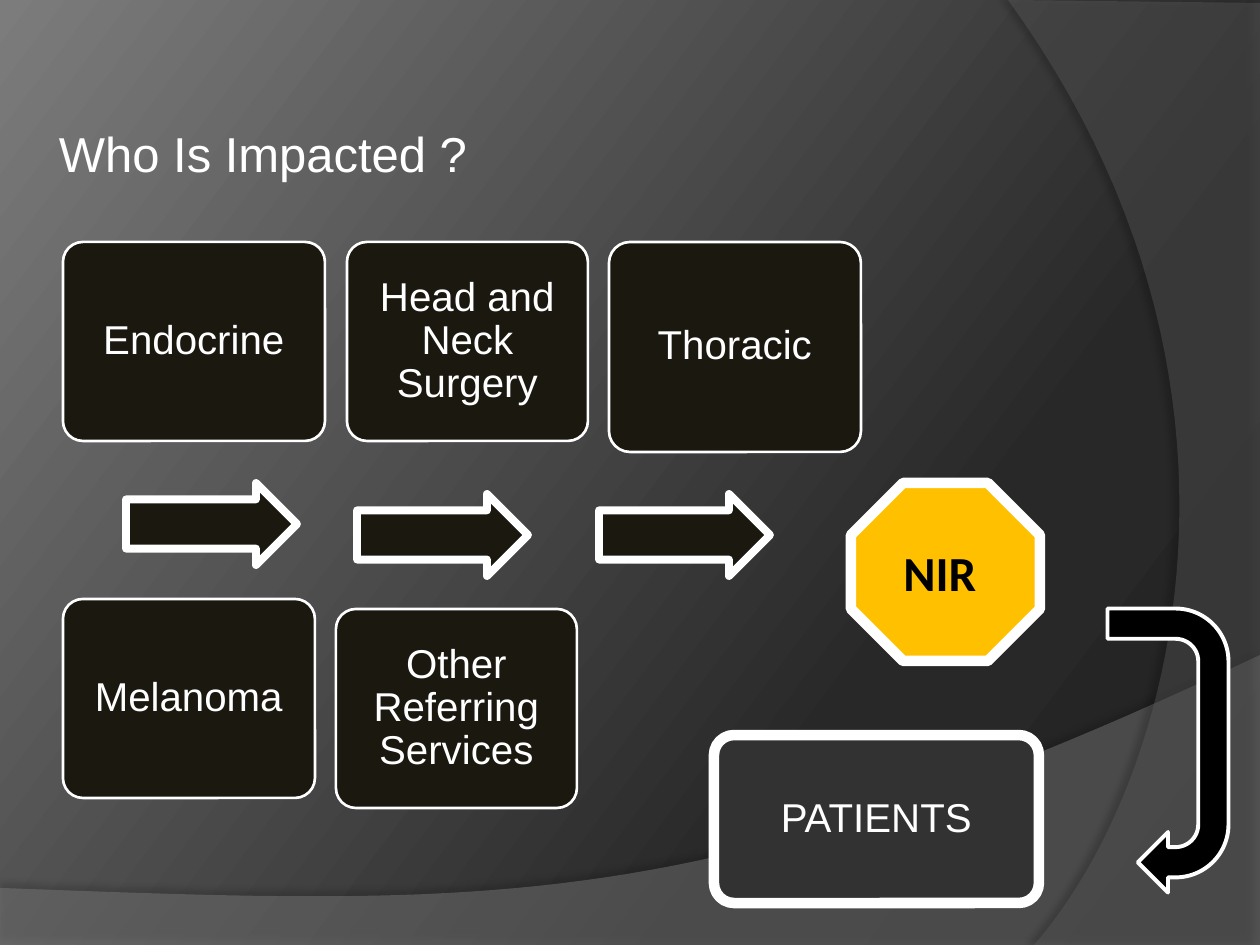
from dataclasses import dataclass

from lxml import etree
from pptx import Presentation
from pptx import util as u
from pptx.dml.color import RGBColor
from pptx.enum import shapes, text
from pptx.oxml import parse_xml
from pptx.oxml.ns import qn

PX = 914400 / 126
SHAPE = shapes.MSO_SHAPE
NS = ('xmlns:a="http://schemas.openxmlformats.org/drawingml/2006/main" '
      'xmlns:p="http://schemas.openxmlformats.org/presentationml/2006/main"')


@dataclass(frozen=True)
class Theme:
    white: str = "FFFFFF"
    black: str = "000000"
    card: str = "1B1810"
    patients: str = "323232"
    amber: str = "FFC000"
    wave: str = "7F7F7F"
    sweep: str = "5E5E5E"
    backdrop: tuple = ((0, "222222"), (30, "282828"), (100, "7C7C7C"))
    backdrop_angle: int = 217
    font: str = "Arial"
    badge_font: str = "Calibri"
    title_size: int = 28
    card_size: int = 23


T = Theme()


@dataclass(frozen=True)
class Block:
    """A preset shape: place in px, line width in points."""
    kind: int
    left: int
    top: int
    width: int
    height: int
    fill: str
    line: float
    adj: tuple = ()
    label: str = ""
    font: str = T.font
    size: int = T.card_size
    color: str = T.white
    bold: bool = False
    spacing: float = 0.9
    rotation: int = 0


@dataclass(frozen=True)
class Swoosh:
    """Translucent outline: straight corners, then one Bezier curve back."""
    corners: tuple
    curve: tuple
    fill: str
    alpha: int
    shadow_alpha: int
    shadow_distance: float
    shadow_angle: int


def px(n: float) -> u.Emu:
    return u.Emu(round(n * PX))


def rgb(value: str) -> RGBColor:
    return RGBColor.from_string(value)


def card(label: str, left: int, top: int, width: int, height: int) -> Block:
    return Block(SHAPE.ROUNDED_RECTANGLE, left, top, width, height,
                 T.card, 1.5, (0.1,), label)


def arrow(left: int, top: int) -> Block:
    return Block(SHAPE.RIGHT_ARROW, left, top, 171, 82, T.card, 4.5, (0.6, 0.5))


SWOOSHES = (
    Swoosh(((0, 888), (0, 946), (1260, 946), (1260, 655)),
           ((704, 919), (493, 906), (0, 888)), T.wave, 45, 35, 3.5, 270),
    Swoosh(((1260, 3), (1260, 945), (1034, 945)),
           ((1178, 780), (1283, 378), (1008, 0)), T.sweep, 40, 45, 4, 180),
)

BLOCKS = (
    card("Endocrine", 63, 242, 262, 199),
    card("Head and Neck Surgery", 347, 242, 241, 199),
    card("Thoracic", 609, 242, 252, 210),
    card("Melanoma", 63, 599, 252, 199),
    card("Other Referring Services", 336, 609, 241, 199),
    arrow(126, 483),
    arrow(357, 494),
    arrow(599, 494),
    Block(SHAPE.ROUNDED_RECTANGLE, 714, 735, 325, 168, T.patients, 6,
          (0.12,), "PATIENTS"),
    Block(SHAPE.OCTAGON, 851, 483, 189, 178, T.amber, 6, label="NIR ",
          font=T.badge_font, size=T.title_size, color=T.black, bold=True,
          spacing=1.0),
    Block(SHAPE.U_TURN_ARROW, 1026, 690, 284, 121, T.black, 2.25, rotation=90),
)


def set_backdrop(s) -> None:
    stops = "".join(f'<a:gs pos="{pos * 1000}"><a:srgbClr val="{c}"/></a:gs>'
                    for pos, c in T.backdrop)
    bg = parse_xml(
        f'<p:bg {NS}><p:bgPr><a:gradFill rotWithShape="1"><a:gsLst>{stops}'
        f'</a:gsLst><a:lin ang="{T.backdrop_angle * 60000}" scaled="0"/>'
        '</a:gradFill><a:effectLst/></p:bgPr></p:bg>')
    s.element.cSld.insert(0, bg)


def bezier(start: tuple, curve: tuple, steps: int = 48) -> list:
    points = (start, *curve)
    result = []
    for i in range(1, steps + 1):
        t = i / steps
        weights = ((1 - t) ** 3, 3 * t * (1 - t) ** 2, 3 * t * t * (1 - t), t ** 3)
        result.append(tuple(round(sum(w * p[k] for w, p in zip(weights, points)) * PX)
                            for k in (0, 1)))
    return result


def draw_swoosh(s, item: Swoosh) -> None:
    corners = [(px(x), px(y)) for x, y in item.corners]
    builder = s.shapes.build_freeform(*corners[0], scale=1.0)
    builder.add_line_segments(corners[1:] + bezier(item.corners[-1], item.curve),
                              close=True)
    sp = builder.convert_to_shape()
    sp.fill.solid()
    sp.fill.fore_color.rgb = rgb(item.fill)
    sp.line.fill.background()
    color = sp.element.spPr.find(qn("a:solidFill")).find(qn("a:srgbClr"))
    etree.SubElement(color, qn("a:alpha"), val=str(item.alpha * 1000))
    sp.element.spPr.append(parse_xml(
        f'<a:effectLst {NS}><a:outerShdw blurRad="{u.Pt(4)}" '
        f'dist="{u.Pt(item.shadow_distance)}" dir="{item.shadow_angle * 60000}" '
        f'algn="ctr" rotWithShape="0"><a:srgbClr val="{T.black}">'
        f'<a:alpha val="{item.shadow_alpha * 1000}"/></a:srgbClr>'
        '</a:outerShdw></a:effectLst>'))


def set_text(p, label: str, font: str, size: int, color: str, bold: bool = False) -> None:
    p.text = label
    p.font.name = font
    p.font.size = u.Pt(size)
    p.font.bold = bold
    p.font.color.rgb = rgb(color)


def draw_block(s, b: Block) -> None:
    sp = s.shapes.add_shape(b.kind, px(b.left), px(b.top), px(b.width), px(b.height))
    sp.shadow.inherit = False
    sp.rotation = b.rotation
    for i, value in enumerate(b.adj):
        sp.adjustments[i] = value
    sp.fill.solid()
    sp.fill.fore_color.rgb = rgb(b.fill)
    sp.line.color.rgb = rgb(T.white)
    sp.line.width = u.Pt(b.line)
    if b.label:
        tf = sp.text_frame
        tf.word_wrap = True
        tf.vertical_anchor = text.MSO_ANCHOR.MIDDLE
        tf.margin_left = tf.margin_right = tf.margin_top = tf.margin_bottom = px(7)
        p = tf.paragraphs[0]
        p.alignment = text.PP_ALIGN.CENTER
        p.line_spacing = b.spacing
        set_text(p, b.label, b.font, b.size, b.color, b.bold)


def draw_title(s) -> None:
    tf = s.shapes.add_textbox(px(53), px(84), px(494), px(126)).text_frame
    tf.word_wrap = True
    tf.vertical_anchor = text.MSO_ANCHOR.BOTTOM
    tf.margin_left = tf.margin_right = px(6)
    tf.margin_top, tf.margin_bottom = 0, px(28)
    set_text(tf.paragraphs[0], "Who Is Impacted ?", T.font, T.title_size, T.white)


def main() -> None:
    prs = Presentation()
    prs.slide_width, prs.slide_height = px(1260), px(945)
    s = prs.slides.add_slide(prs.slide_layouts[6])
    set_backdrop(s)
    for item in SWOOSHES:
        draw_swoosh(s, item)
    draw_title(s)
    for b in BLOCKS:
        draw_block(s, b)
    prs.save("out.pptx")


if __name__ == "__main__":
    main()
